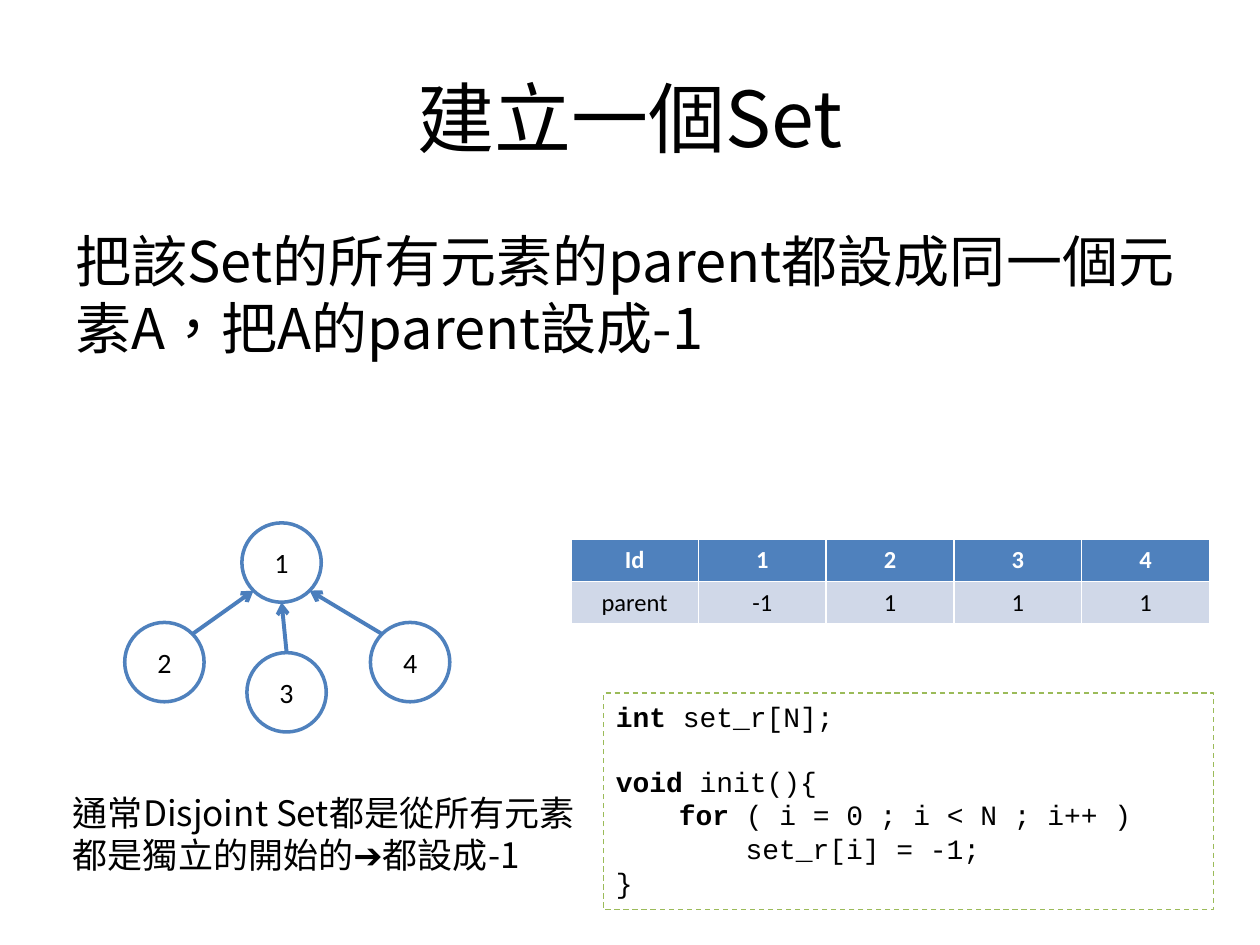
from math import cos, radians, sin

from lxml.etree import SubElement
from pptx import Presentation
from pptx.dml.color import RGBColor
from pptx.enum.dml import MSO_LINE
from pptx.enum.shapes import MSO_CONNECTOR, MSO_SHAPE
from pptx.enum.text import MSO_ANCHOR, PP_ALIGN
from pptx.oxml.ns import qn
from pptx.util import Inches, Pt

COLORS = {
    "text": "000000",
    "white": "FFFFFF",
    "blue": "4F81BD",
    "arrow": "4B7EBC",
    "band": "D0D8E8",
    "green": "9BBB59",
}
CHINESE, LATIN, CODE = "Noto Sans CJK SC", "Calibri", "Courier New"
COLUMNS, ROWS = 100, 75
NODE_SIZE = 6.3


class SlideBuilder:
    """Holds the deck, its current slide and the grid the lengths refer to."""

    def __init__(self):
        self.deck = Presentation()
        self.deck.slide_width, self.deck.slide_height = Inches(10), Inches(7.5)
        self.slide = self.deck.slides.add_slide(self.deck.slide_layouts[5])

    def x(self, columns):
        return round(self.deck.slide_width * columns / COLUMNS)

    def y(self, rows):
        return round(self.deck.slide_height * rows / ROWS)

    def area(self, left, top, width, height):
        return self.x(left), self.y(top), self.x(width), self.y(height)

    def color(self, name):
        return RGBColor.from_string(COLORS[name])

    def span(self, para, text, size, face, color="text", bold=False):
        run = para.add_run()
        run.text = text
        run.font.size, run.font.bold, run.font.name = Pt(size), bold, face
        run.font.color.rgb = self.color(color)
        if face == CHINESE:
            properties = run.font._element
            properties.set("lang", "zh-TW")
            SubElement(properties, qn("a:ea")).set("typeface", face)

    def paragraphs(self, frame, count):
        return [frame.paragraphs[0]] + [frame.add_paragraph() for _ in range(count - 1)]

    def title(self, text, area):
        title = self.slide.shapes.title
        title.left, title.top, title.width, title.height = self.area(*area)
        title.text_frame.vertical_anchor = MSO_ANCHOR.MIDDLE
        para = title.text_frame.paragraphs[0]
        para.alignment = PP_ALIGN.CENTER
        self.span(para, text, 44, CHINESE)

    def text(self, lines, area, size, space_before=0):
        frame = self.slide.shapes.add_textbox(*self.area(*area)).text_frame
        frame.word_wrap = True
        for para, line in zip(self.paragraphs(frame, len(lines)), lines):
            para.space_before = Pt(space_before)
            self.span(para, line, size, CHINESE)

    def node(self, label, left, top):
        area = self.area(left, top, NODE_SIZE, NODE_SIZE)
        circle = self.slide.shapes.add_shape(MSO_SHAPE.OVAL, *area)
        circle.shadow.inherit = False
        circle.fill.solid()
        circle.fill.fore_color.rgb = self.color("white")
        circle.line.color.rgb = self.color("blue")
        circle.line.width = Pt(2)
        circle.text_frame.vertical_anchor = MSO_ANCHOR.MIDDLE
        para = circle.text_frame.paragraphs[0]
        para.alignment = PP_ALIGN.CENTER
        self.span(para, label, 16, LATIN)
        return circle

    def rim(self, circle, angle):
        """Point on the circle's edge, in degrees clockwise from the right."""
        radius = circle.width / 2
        return (round(circle.left + radius * (1 + cos(radians(angle)))),
                round(circle.top + radius * (1 + sin(radians(angle)))))

    def parent_arrow(self, parent, child, angle):
        """Arrow into the parent's rim, from the opposite side of the child."""
        line = self.slide.shapes.add_connector(
            MSO_CONNECTOR.STRAIGHT, *self.rim(child, angle + 180), *self.rim(parent, angle))
        line.line.color.rgb = self.color("arrow")
        line.line.width = Pt(2.25)
        SubElement(line.line._get_or_add_ln(), qn("a:tailEnd")).set("type", "arrow")
        SubElement(line._element.spPr, qn("a:effectLst"))

    def table(self, rows, area):
        frame = self.slide.shapes.add_table(len(rows), len(rows[0]), *self.area(*area))
        for row_index, row in enumerate(rows):
            header = row_index == 0
            for column_index, value in enumerate(row):
                cell = frame.table.cell(row_index, column_index)
                cell.fill.solid()
                cell.fill.fore_color.rgb = self.color("blue" if header else "band")
                para = cell.text_frame.paragraphs[0]
                para.alignment = PP_ALIGN.CENTER
                self.span(para, value, 14, LATIN, "white" if header else "text", header)

    def code(self, lines, area):
        """Each line is (indent in inches, space before in points, keyword, rest)."""
        box = self.slide.shapes.add_shape(MSO_SHAPE.RECTANGLE, *self.area(*area))
        box.shadow.inherit = False
        box.fill.background()
        box.line.color.rgb = self.color("green")
        box.line.width, box.line.dash_style = Pt(0.75), MSO_LINE.DASH
        frame = box.text_frame
        frame.word_wrap, frame.vertical_anchor = True, MSO_ANCHOR.TOP
        paras = self.paragraphs(frame, len(lines))
        for para, (indent, space, keyword, rest) in zip(paras, lines):
            para.alignment, para.space_before = PP_ALIGN.LEFT, Pt(space)
            para._p.get_or_add_pPr().set("marL", str(Inches(indent)))
            if keyword:
                self.span(para, keyword, 16, CODE, bold=True)
            self.span(para, rest, 16, CODE)


def main():
    builder = SlideBuilder()
    builder.title("建立一個Set", (5, 3, 90, 12.5))
    builder.text(["把該Set的所有元素的parent都設成同一個元素A，把A的parent設成-1"],
                 (5, 17.5, 90, 49.5), 32, space_before=6.4)

    root = builder.node("1", 19.2, 41.5)
    children = [("2", 9.9, 49.4, 135), ("4", 29.4, 49.4, 45), ("3", 19.6, 51.8, 90)]
    for label, left, top, angle in children:
        builder.parent_arrow(root, builder.node(label, left, top), angle)

    builder.table([["Id", "1", "2", "3", "4"], ["parent", "-1", "1", "1", "1"]],
                  (45.3, 42.8, 50.7, 6.7))
    builder.text(["通常Disjoint Set都是從所有元素", "都是獨立的開始的➔都設成-1"],
                 (4.8, 62.3, 42.2, 7.7), 20)
    builder.code([
        (0, 0, "int", " set_r[N];"),
        (0, 18, "void", " init(){"),
        (0.5, 0, "for", " ( i = 0 ; i < N ; i++ )"),
        (1.03, 0, "", "set_r[i] = -1;"),
        (0, 0, "", "}"),
    ], (47.9, 55, 48.4, 17.2))
    builder.deck.save("out.pptx")


if __name__ == "__main__":
    main()
